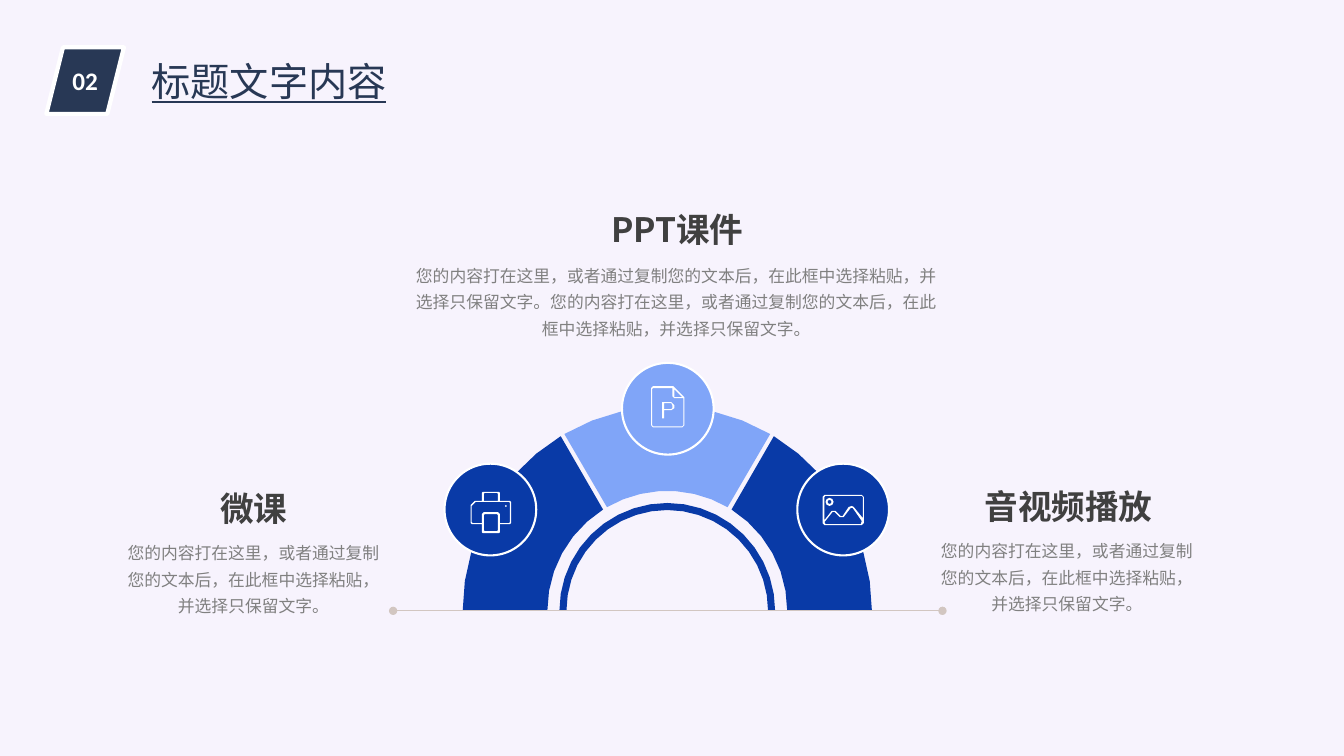
from dataclasses import dataclass
from math import cos, radians, sin

from lxml import etree
from pptx import Presentation
from pptx.dml.color import RGBColor
from pptx.enum.shapes import MSO_CONNECTOR, MSO_SHAPE
from pptx.enum.text import MSO_ANCHOR, MSO_AUTO_SIZE, PP_ALIGN
from pptx.oxml.ns import qn
from pptx.shapes.autoshape import Shape
from pptx.slide import Slide
from pptx.text.text import TextFrame
from pptx.util import Inches, Length, Pt

PALE = RGBColor(0xF7, 0xF3, 0xFD)
NAVY = RGBColor(0x28, 0x38, 0x55)
BLUE = RGBColor(0x09, 0x3A, 0xA7)
SKY = RGBColor(0x80, 0xA5, 0xF8)
WHITE = RGBColor(0xFF, 0xFF, 0xFF)
SAND = RGBColor(0xD2, 0xC6, 0xC1)
DARK = RGBColor(0x40, 0x40, 0x40)
GREY = RGBColor(0x80, 0x80, 0x80)

SLANT = MSO_SHAPE.PARALLELOGRAM
OVAL = MSO_SHAPE.OVAL
STRAIGHT = MSO_CONNECTOR.STRAIGHT
CENTER = PP_ALIGN.CENTER
TOP, MIDDLE, BOTTOM = MSO_ANCHOR.TOP, MSO_ANCHOR.MIDDLE, MSO_ANCHOR.BOTTOM
GROW = MSO_AUTO_SIZE.SHAPE_TO_FIT_TEXT

HAN = "Noto Sans CJK SC"
HUB_X, HUB_Y = 6.62, 6.06
DISC = 0.91

Point = tuple[float, float]
Path = list[Point]


@dataclass
class Font:
    size: int
    color: RGBColor
    face: str = HAN
    bold: bool = False
    under: bool = False


@dataclass
class Band:
    outer: float
    inner: float
    outer_span: Point
    inner_span: Point
    color: RGBColor


@dataclass
class Badge:
    left: float
    top: float
    color: RGBColor
    icon: list[Path]


@dataclass
class Note:
    head: str
    head_box: tuple[float, float, float]
    body: str
    body_box: tuple[float, float, float]


def arc(radius: float, start: float, end: float) -> Path:
    steps = round(abs(end - start) / 9)
    turns = [radians(start + (end - start) * i / steps) for i in range(steps + 1)]
    return [(HUB_X + radius * cos(t), HUB_Y - radius * sin(t)) for t in turns]


def box(left: float, top: float, right: float, base: float, cut: float = 0.01) -> Path:
    return [(left + cut, top), (right - cut, top), (right, top + cut),
            (right, base - cut), (right - cut, base), (left + cut, base),
            (left, base - cut), (left, top + cut)]


def ring(x: float, y: float, radius: float, count: int = 8) -> Path:
    turns = [radians(360 * i / count) for i in range(count)]
    return [(x + radius * cos(t), y + radius * sin(t)) for t in turns]


def paint(shape: Shape, color: RGBColor, width: float = 0) -> None:
    shape.shadow.inherit = False
    shape.fill.solid()
    shape.fill.fore_color.rgb = color
    if width:
        shape.line.color.rgb = WHITE
        shape.line.width = Pt(width)
    else:
        shape.line.fill.background()


def draw(shapes, paths: list[Path], color: RGBColor) -> None:
    pen = None
    for path in paths:
        spots = [(Inches(x), Inches(y)) for x, y in path]
        if pen is None:
            pen = shapes.build_freeform(*spots[0])
        else:
            pen.move_to(*spots[0])
        pen.add_line_segments(spots[1:], close=True)
    paint(pen.convert_to_shape(), color)


def write(frame: TextFrame, text: str, font: Font, anchor: MSO_ANCHOR,
          space: float | Length | None = None) -> None:
    frame.text = text
    frame.vertical_anchor = anchor
    line = frame.paragraphs[0]
    line.alignment = CENTER
    line.line_spacing = space
    run = line.runs[0]
    run.font.size = Pt(font.size)
    run.font.bold = font.bold
    run.font.underline = font.under
    run.font.color.rgb = font.color
    run.font.name = font.face
    etree.SubElement(run.font._element, qn("a:ea")).set("typeface", font.face)


def label(slide: Slide, place: tuple[float, ...], text: str, font: Font,
          anchor: MSO_ANCHOR = TOP, space: float | Length | None = None) -> None:
    frame = slide.shapes.add_textbox(*map(Inches, place)).text_frame
    frame.word_wrap = True
    if anchor == TOP:
        frame.auto_size = GROW
    write(frame, text, font, anchor, space)


def base_line(slide: Slide) -> None:
    line = slide.shapes.add_connector(
        STRAIGHT, Inches(3.9), Inches(HUB_Y), Inches(9.35), Inches(HUB_Y))
    line.line.color.rgb = SAND
    line.line.width = Pt(0.5)
    stroke = line.line._get_or_add_ln()
    for end in ("a:headEnd", "a:tailEnd"):
        etree.SubElement(stroke, qn(end)).set("type", "oval")
    etree.SubElement(line._element.spPr, qn("a:effectLst"))


BANDS = [
    Band(1.07, 1, (180, 0), (180, 0), BLUE),
    Band(2.03, 1.19, (120.2, 59.8), (120.2, 59.8), SKY),
    Band(2.03, 1.19, (180, 121.4), (180, 122.4), BLUE),
    Band(2.03, 1.19, (58.6, 0), (57.6, 0), BLUE),
]

PRINTER = [
    [(4.79, 4.88), (4.95, 4.88), (4.96, 4.89), (4.96, 4.97), (5.06, 4.97),
     (5.07, 4.98), (5.07, 5.19), (5.06, 5.2), (4.96, 5.2), (4.96, 5.28),
     (4.95, 5.29), (4.79, 5.29), (4.78, 5.28), (4.78, 5.2), (4.68, 5.2),
     (4.67, 5.19), (4.67, 5.01), (4.71, 4.97), (4.78, 4.97), (4.78, 4.89)],
    box(4.8, 5.1, 4.94, 5.27),
    [(4.72, 4.98), (5.05, 4.98), (5.06, 4.99), (5.06, 5.18), (5.05, 5.19),
     (4.96, 5.19), (4.96, 5.1), (4.94, 5.08), (4.8, 5.08), (4.78, 5.1),
     (4.78, 5.19), (4.69, 5.19), (4.68, 5.18), (4.68, 5.02)],
    ring(5.02, 5.02, 0.01, 4),
    [(4.81, 4.89), (4.93, 4.89), (4.94, 4.9), (4.94, 4.97), (4.8, 4.97), (4.8, 4.9)],
]
FILE = [
    [(6.48, 3.83), (6.68, 3.83), (6.79, 3.94), (6.79, 4.22), (6.77, 4.24),
     (6.48, 4.24), (6.46, 4.22), (6.46, 3.85)],
    [(6.48, 3.85), (6.67, 3.85), (6.67, 3.93), (6.69, 3.95), (6.78, 3.95),
     (6.78, 4.22), (6.77, 4.23), (6.48, 4.23), (6.47, 4.22), (6.47, 3.86)],
    [(6.57, 3.99), (6.66, 3.99), (6.69, 4.02), (6.69, 4.05), (6.66, 4.07),
     (6.59, 4.07), (6.59, 4.15), (6.57, 4.15)],
    [(6.59, 4), (6.66, 4), (6.67, 4.02), (6.67, 4.05), (6.66, 4.06), (6.59, 4.06)],
    [(6.69, 3.86), (6.69, 3.94), (6.77, 3.94)],
]
PHOTO = [
    box(8.16, 4.91, 8.57, 5.21, 0.02),
    [(8.46, 5.04), (8.44, 5.04), (8.37, 5.13), (8.33, 5.13), (8.28, 5.08),
     (8.26, 5.08), (8.18, 5.18), (8.19, 5.2), (8.54, 5.2), (8.55, 5.17)],
    [(8.19, 4.92), (8.55, 4.92), (8.56, 4.93), (8.56, 5.14), (8.47, 5.03),
     (8.45, 5.02), (8.42, 5.03), (8.36, 5.12), (8.34, 5.12), (8.29, 5.07),
     (8.25, 5.07), (8.18, 5.16), (8.18, 4.93)],
    ring(8.23, 4.98, 0.04),
    ring(8.23, 4.98, 0.02),
]
BADGES = [
    Badge(4.41, 4.6, BLUE, PRINTER),
    Badge(6.17, 3.6, SKY, FILE),
    Badge(7.91, 4.6, BLUE, PHOTO),
]

BODY = "您的内容打在这里，或者通过复制您的文本后，在此框中选择粘贴，并选择只保留文字。"
NOTES = [
    Note("PPT课件", (5.53, 1.92, 2.38), BODY * 2, (3.99, 2.53, 5.44)),
    Note("微课", (1.33, 4.69, 2.38), BODY, (1.11, 5.28, 2.81)),
    Note("音视频播放", (9.13, 4.67, 2.94), BODY, (9.18, 5.26, 2.81)),
]


def main() -> None:
    deck = Presentation()
    deck.slide_width, deck.slide_height = Inches(40 / 3), Inches(7.5)
    slide = deck.slides.add_slide(deck.slide_layouts[6])
    slide.background.fill.solid()
    slide.background.fill.fore_color.rgb = PALE

    tag = slide.shapes.add_shape(SLANT, *map(Inches, (0.46, 0.47, 0.77, 0.66)))
    paint(tag, NAVY, 3)
    tag.text_frame.word_wrap = False
    write(tag.text_frame, "02", Font(18, WHITE, "Calibri", bold=True), MIDDLE)
    label(slide, (1.23, 0.52, 2.88, 0.57), "标题文字内容", Font(28, NAVY, under=True))

    arch = slide.shapes.add_group_shape()
    for band in BANDS:
        rim = arc(band.outer, *band.outer_span)
        core = arc(band.inner, *band.inner_span)
        draw(arch.shapes, [rim + core[::-1]], band.color)
    for badge in BADGES:
        disc = slide.shapes.add_shape(
            OVAL, *map(Inches, (badge.left, badge.top, DISC, DISC)))
        paint(disc, badge.color, 1.5)
        draw(slide.shapes, badge.icon, WHITE)
    base_line(slide)
    for note in NOTES:
        label(slide, (*note.head_box, 0.6), note.head, Font(24, DARK, bold=True),
              BOTTOM, Pt(25))
        label(slide, (*note.body_box, 0.89), note.body, Font(12, GREY), TOP, 1.3)
    deck.save("out.pptx")


if __name__ == "__main__":
    main()
